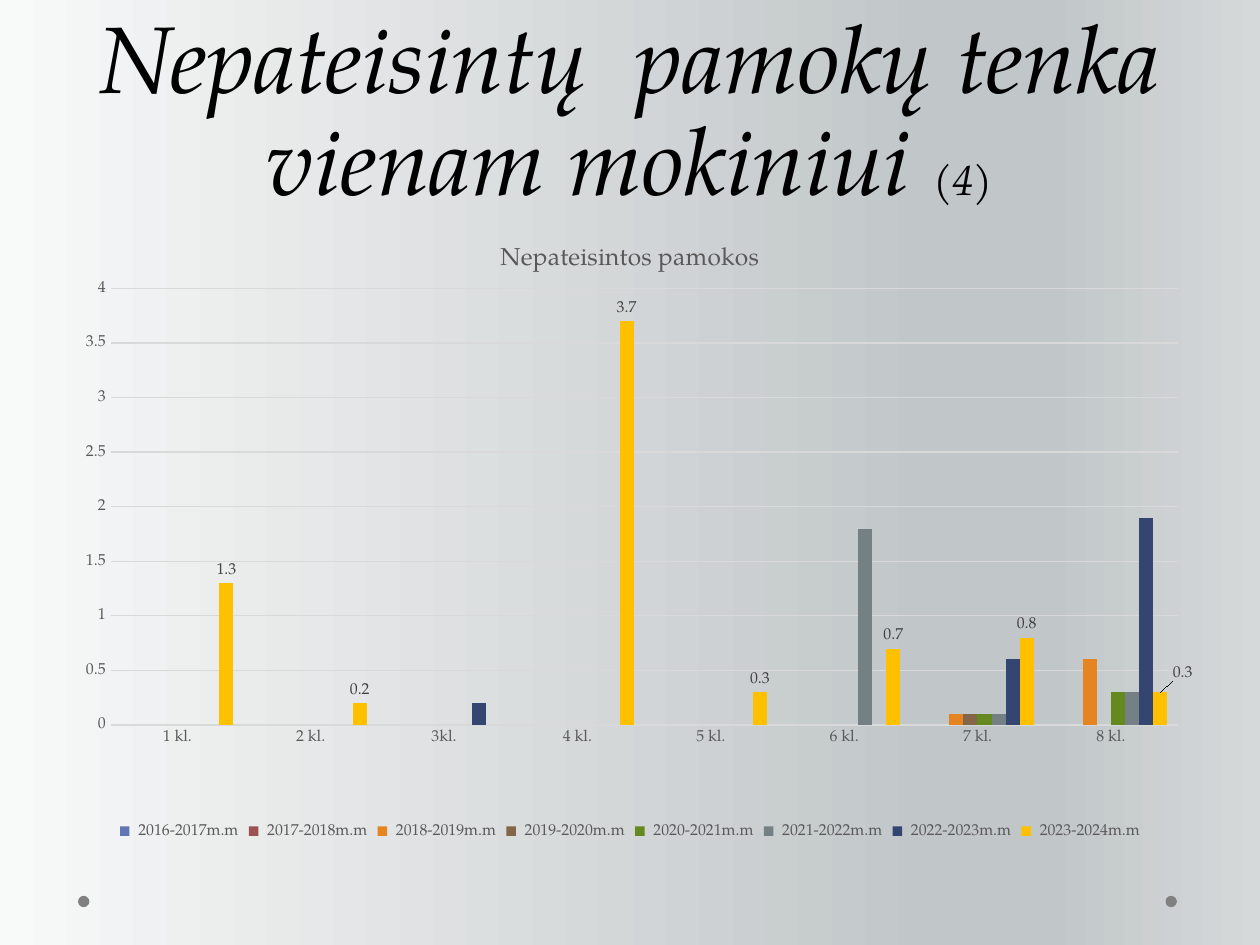
from dataclasses import dataclass
from typing import Optional

from lxml.etree import SubElement
from pptx import Presentation
from pptx.chart.chart import Chart
from pptx.chart.data import CategoryChartData
from pptx.dml.color import RGBColor
from pptx.enum.chart import XL_CHART_TYPE as ChartType
from pptx.enum.chart import XL_LABEL_POSITION as LabelPos
from pptx.enum.chart import XL_LEGEND_POSITION as LegendPos
from pptx.enum.chart import XL_TICK_MARK as TickMark
from pptx.enum.shapes import MSO_SHAPE as Preset
from pptx.enum.text import MSO_ANCHOR as Anchor
from pptx.enum.text import MSO_AUTO_SIZE as AutoSize
from pptx.enum.text import PP_ALIGN as Align
from pptx.oxml import parse_xml
from pptx.oxml.ns import nsdecls, qn
from pptx.slide import Slide
from pptx.util import Pt

FONT = "TeX Gyre Pagella"
COLORS = {"title": "000000", "axis": "595959", "label": "404040",
          "grid": "D9D9D9", "dot": "808080"}
BACKGROUND_STOPS = {0: "F8F9F9", 74: "C1C6C8", 83: "C1C6C8", 100: "D6D9DA"}


@dataclass
class SchoolYear:
    start: int
    color: str
    lessons: dict[int, float]  # grade -> unexcused lessons per pupil

    @property
    def name(self) -> str:
        return f" {self.start}-{self.start + 1}m.m"

    def values(self) -> list[Optional[float]]:
        return [self.lessons.get(grade) for grade in range(1, 9)]


@dataclass
class Dot:
    left: float
    top: float = 511.9
    size: float = 6.5


GRADES = ["1 kl.", "2 kl.", "3kl.", "4 kl.", "5 kl.", "6 kl.", "7 kl.", "8 kl."]
SCHOOL_YEARS = [
    SchoolYear(2016, "6076B4", {}),
    SchoolYear(2017, "9C5252", {}),
    SchoolYear(2018, "E68422", {7: 0.1, 8: 0.6}),
    SchoolYear(2019, "846648", {7: 0.1}),
    SchoolYear(2020, "63891F", {7: 0.1, 8: 0.3}),
    SchoolYear(2021, "758085", {6: 1.8, 7: 0.1, 8: 0.3}),
    SchoolYear(2022, "354571", {3: 0.2, 7: 0.6, 8: 1.9}),
    SchoolYear(2023, "FFC000", {1: 1.3, 2: 0.2, 4: 3.7, 5: 0.3, 6: 0.7, 7: 0.8, 8: 0.3}),
]
DOTS = [Dot(666), Dot(44.6)]


def rgb(key: str) -> RGBColor:
    return RGBColor.from_string(COLORS[key])


def style_font(font, size: float, color: str) -> None:
    font.name, font.size, font.bold = FONT, Pt(size), False
    font.color.rgb = rgb(color)


def paint_background(slide: Slide) -> None:
    fill = slide.background.fill
    fill.gradient()
    fill.gradient_angle = 0
    stops = next(slide.background._cSld.iter(qn("a:gsLst")))
    for stop in list(stops):
        stops.remove(stop)
    for percent, color in BACKGROUND_STOPS.items():
        stop = SubElement(stops, qn("a:gs"), pos=str(percent * 1000))
        SubElement(stop, qn("a:srgbClr"), val=color)


def draw_dot(slide: Slide, dot: Dot) -> None:
    oval = slide.shapes.add_shape(Preset.OVAL, Pt(dot.left), Pt(dot.top),
                                  Pt(dot.size), Pt(dot.size))
    oval.shadow.inherit = False
    oval.fill.solid()
    oval.fill.fore_color.rgb = rgb("dot")
    oval.line.fill.background()


def write_title(slide: Slide) -> None:
    title = slide.shapes.title
    title.left, title.top, title.width, title.height = Pt(36), Pt(0), Pt(648), Pt(126)
    frame = title.text_frame
    frame.auto_size, frame.word_wrap = AutoSize.NONE, True
    frame.vertical_anchor = Anchor.BOTTOM
    paragraph = frame.paragraphs[0]
    paragraph.alignment, paragraph.line_spacing = Align.CENTER, Pt(58)
    for text, size in (("Nepateisintų  pamokų tenka vienam mokiniui ", 54), ("(4)", 24)):
        run = paragraph.add_run()
        run.text = text
        style_font(run.font, size, "title")
        run.font.italic = True


def manual_layout(x: float, y: float, size: str = ""):
    """Layout element in fractions of the chart; size holds any w and h parts."""
    target = '<c:layoutTarget val="inner"/>' if size else ""
    modes = '<c:xMode val="edge"/><c:yMode val="edge"/>' if size else ""
    return parse_xml(f'<c:layout {nsdecls("c")}><c:manualLayout>{target}{modes}'
                     f'<c:x val="{x}"/><c:y val="{y}"/>{size}'
                     '</c:manualLayout></c:layout>')


def place_plot(chart: Chart) -> None:
    plot_area = chart._chartSpace.chart.plotArea
    for layout in plot_area.findall(qn("c:layout")):
        plot_area.remove(layout)
    plot_area.insert(0, manual_layout(0.042, 0.109, '<c:w val="0.941"/><c:h val="0.7"/>'))


def style_axes(chart: Chart) -> None:
    for axis in (chart.category_axis, chart.value_axis):
        axis.major_tick_mark = axis.minor_tick_mark = TickMark.NONE
        axis.format.line.fill.background()
        style_font(axis.tick_labels.font, 9, "axis")
    scale = chart.value_axis
    scale.minimum_scale, scale.maximum_scale, scale.major_unit = 0, 4, 0.5
    grid = scale.major_gridlines.format.line
    grid.width = Pt(0.75)
    grid.color.rgb = rgb("grid")


def label_latest_year(series) -> None:
    labels = series.data_labels
    labels.show_value, labels.position = True, LabelPos.OUTSIDE_END
    style_font(labels.font, 9, "label")
    shifted = series.points[len(GRADES) - 1].data_label
    style_font(shifted.font, 9, "label")
    shifted.position = LabelPos.OUTSIDE_END
    element = next(labels._element.iter(qn("c:dLbl")))
    element.insert(1, manual_layout(0.02, -0.01))


def draw_chart(slide: Slide) -> None:
    data = CategoryChartData()
    data.categories = GRADES
    for year in SCHOOL_YEARS:
        data.add_series(year.name, year.values())
    chart = slide.shapes.add_chart(ChartType.COLUMN_CLUSTERED, Pt(36), Pt(126),
                                   Pt(648), Pt(356.4), data).chart
    style_font(chart.font, 10, "title")
    heading = chart.chart_title.text_frame.paragraphs[0].add_run()
    heading.text = "Nepateisintos pamokos"
    style_font(heading.font, 14, "axis")
    chart.has_legend = True
    chart.legend.position = LegendPos.BOTTOM
    chart.legend.include_in_layout = False
    style_font(chart.legend.font, 9, "axis")
    place_plot(chart)
    style_axes(chart)
    plot = chart.plots[0]
    plot.gap_width, plot.overlap, plot.vary_by_categories = 150, 0, False
    for series, year in zip(plot.series, SCHOOL_YEARS):
        series.format.fill.solid()
        series.format.fill.fore_color.rgb = RGBColor.from_string(year.color)
    label_latest_year(plot.series[len(SCHOOL_YEARS) - 1])


def main() -> None:
    deck = Presentation()
    deck.slide_width, deck.slide_height = Pt(720), Pt(540)
    slide = deck.slides.add_slide(deck.slide_layouts[5])
    paint_background(slide)
    for dot in DOTS:
        draw_dot(slide, dot)
    write_title(slide)
    draw_chart(slide)
    deck.save("out.pptx")


if __name__ == "__main__":
    main()
